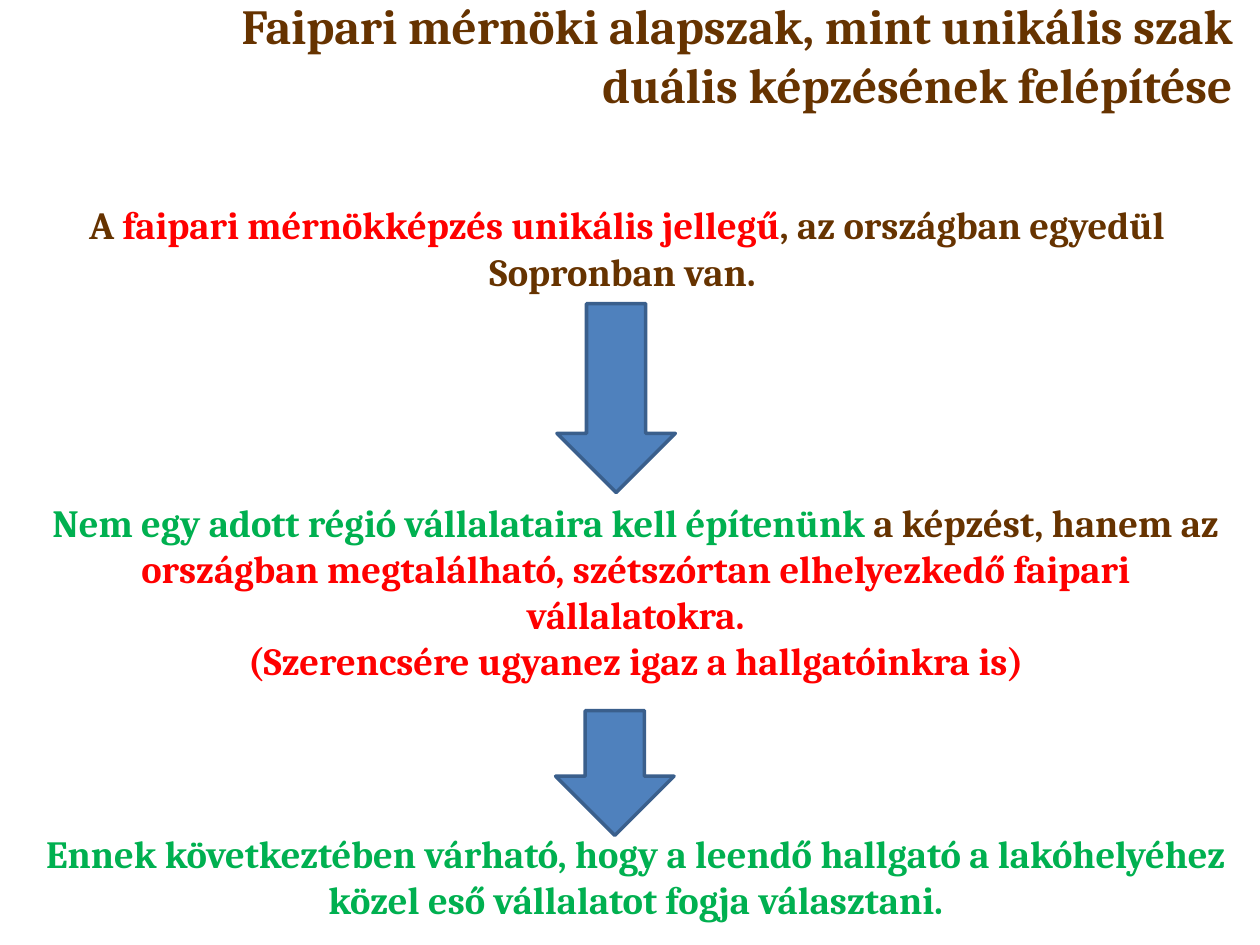
from pptx import Presentation
from pptx.dml.color import RGBColor
from pptx.enum.shapes import MSO_SHAPE
from pptx.enum.text import MSO_ANCHOR, MSO_AUTO_SIZE, PP_ALIGN
from pptx.util import Inches, Pt

BROWN = RGBColor(0x66, 0x33, 0x00)
RED = RGBColor(0xFF, 0x00, 0x00)
GREEN = RGBColor(0x00, 0xB0, 0x50)
BLUE = RGBColor(0x4F, 0x81, 0xBD)
DARK_BLUE = RGBColor(0x3A, 0x5F, 0x8C)


class SlideBuilder:
    font_name = "Cambria"
    title_size = Pt(28)
    body_size = Pt(22)
    text_width = 9.69
    arrow_width = 0.94

    def __init__(self, deck):
        self.page = deck.slides.add_slide(deck.slide_layouts[5])

    def add_spans(self, para, spans, size, alignment):
        para.alignment = alignment
        for text, color in spans:
            span = para.add_run()
            span.text = text
            span.font.name = self.font_name
            span.font.size = size
            span.font.bold = True
            span.font.color.rgb = color

    def title(self, left, top, width, height, text):
        box = self.page.shapes.title
        box.left, box.top = Inches(left), Inches(top)
        box.width, box.height = Inches(width), Inches(height)
        frame = box.text_frame
        frame.word_wrap = True
        frame.auto_size = MSO_AUTO_SIZE.NONE
        frame.vertical_anchor = MSO_ANCHOR.MIDDLE
        self.add_spans(frame.paragraphs[0], [(text, BROWN)],
                       self.title_size, PP_ALIGN.RIGHT)

    def statement(self, left, top, height, paragraphs):
        box = self.page.shapes.add_textbox(
            Inches(left), Inches(top), Inches(self.text_width), Inches(height))
        frame = box.text_frame
        frame.word_wrap = True
        frame.auto_size = MSO_AUTO_SIZE.SHAPE_TO_FIT_TEXT
        for index, spans in enumerate(paragraphs):
            para = frame.add_paragraph() if index else frame.paragraphs[0]
            self.add_spans(para, spans, self.body_size, PP_ALIGN.CENTER)

    def down_arrow(self, left, top, height):
        arrow = self.page.shapes.add_shape(
            MSO_SHAPE.DOWN_ARROW, Inches(left), Inches(top),
            Inches(self.arrow_width), Inches(height))
        arrow.shadow.inherit = False
        arrow.fill.solid()
        arrow.fill.fore_color.rgb = BLUE
        arrow.line.color.rgb = DARK_BLUE
        arrow.line.width = Pt(2)


def main():
    deck = Presentation()
    deck.slide_width, deck.slide_height = Inches(10), Inches(7.5)
    builder = SlideBuilder(deck)

    # Title
    builder.title(0.85, 0.04, 9.03, 0.79,
                  "Faipari mérnöki alapszak, mint unikális szak "
                  "duális képzésének felépítése")

    # Starting point
    builder.statement(0.13, 1.55, 1.25, [
        [("A ", BROWN),
         ("faipari mérnökképzés unikális jellegű", RED),
         (", az országban egyedül Sopronban van. ", BROWN)],
    ])
    builder.down_arrow(4.42, 2.41, 1.5)

    # Consequence for the training
    builder.statement(0.2, 3.91, 1.58, [
        [("Nem egy adott régió vállalataira kell építenünk ", GREEN),
         ("a képzést, hanem az ", BROWN),
         ("országban megtalálható, szétszórtan elhelyezkedő "
          "faipari vállalatokra.", RED)],
        [("(Szerencsére ugyanez igaz a hallgatóinkra is)", RED)],
    ])
    builder.down_arrow(4.41, 5.64, 0.99)

    # Expected outcome
    builder.statement(0.2, 6.54, 0.84, [
        [("Ennek következtében várható, hogy a leendő hallgató a "
          "lakóhelyéhez közel eső vállalatot fogja választani.", GREEN)],
    ])

    deck.save("out.pptx")


if __name__ == "__main__":
    main()
